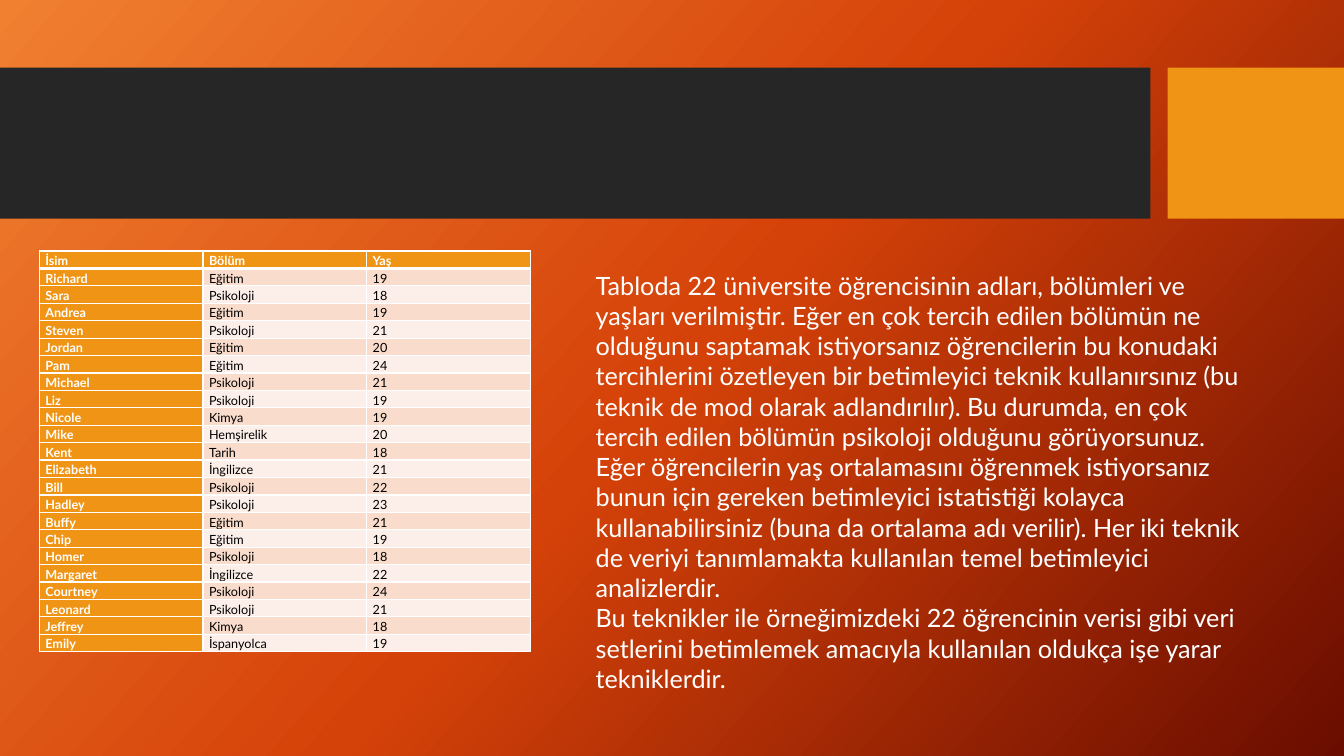
from copy import deepcopy

from lxml import etree
from pptx import Presentation
from pptx.dml.color import RGBColor
from pptx.enum.shapes import MSO_SHAPE
from pptx.oxml.ns import qn
from pptx.util import Inches, Pt

RECT = MSO_SHAPE.RECTANGLE
FONT = "Lato"
WHITE, BLACK, DARK, AMBER = "FFFFFF", "000000", "262626", "F09415"
BANDS = ("FCEEE8", "F9DCCC")
STOPS = ((0, "F18031"), (0.5, "D54209"), (1, "6A0D00"))

ROWS = [
    ("İsim", "Bölüm", "Yaş"),
    ("Richard", "Eğitim", "19"),
    ("Sara", "Psikoloji", "18"),
    ("Andrea", "Eğitim", "19"),
    ("Steven", "Psikoloji", "21"),
    ("Jordan", "Eğitim", "20"),
    ("Pam", "Eğitim", "24"),
    ("Michael", "Psikoloji", "21"),
    ("Liz", "Psikoloji", "19"),
    ("Nicole", "Kimya", "19"),
    ("Mike", "Hemşirelik", "20"),
    ("Kent", "Tarih", "18"),
    ("Elizabeth", "İngilizce", "21"),
    ("Bill", "Psikoloji", "22"),
    ("Hadley", "Psikoloji", "23"),
    ("Buffy", "Eğitim", "21"),
    ("Chip", "Eğitim", "19"),
    ("Homer", "Psikoloji", "18"),
    ("Margaret", "İngilizce", "22"),
    ("Courtney", "Psikoloji", "24"),
    ("Leonard", "Psikoloji", "21"),
    ("Jeffrey", "Kimya", "18"),
    ("Emily", "İspanyolca", "19"),
]

NOTES = [
    "Tabloda 22 üniversite öğrencisinin adları, bölümleri ve yaşları verilmiştir. "
    "Eğer en çok tercih edilen bölümün ne olduğunu saptamak istiyorsanız öğrencilerin "
    "bu konudaki tercihlerini özetleyen bir betimleyici teknik kullanırsınız (bu teknik "
    "de mod olarak adlandırılır). Bu durumda, en çok tercih edilen bölümün psikoloji "
    "olduğunu görüyorsunuz. Eğer öğrencilerin yaş ortalamasını öğrenmek istiyorsanız "
    "bunun için gereken betimleyici istatistiği kolayca kullanabilirsiniz (buna da "
    "ortalama adı verilir). Her iki teknik de veriyi tanımlamakta kullanılan temel "
    "betimleyici analizlerdir.",
    "Bu teknikler ile örneğimizdeki 22 öğrencinin verisi gibi veri setlerini betimlemek "
    "amacıyla kullanılan oldukça işe yarar tekniklerdir.",
]


def color(code):
    return RGBColor.from_string(code)


def style(para, size, code, bold=False):
    for run in para.runs:
        font = run.font
        font.name, font.size, font.bold = FONT, Pt(size), bold
        font.color.rgb = color(code)


def backdrop(slide):
    fill = slide.background.fill
    fill.gradient()
    fill.gradient_angle = 360 - 42
    # The default gradient has two stops; add a third
    stops = slide.element.find(".//" + qn("a:gsLst"))
    stops.append(deepcopy(stops[-1]))
    for stop, (pos, code) in zip(fill.gradient_stops, STOPS):
        stop.position = pos
        stop.color.rgb = color(code)


def band(slide, left, top, width, height):
    gap, block = 0.17, 1.75
    bar = width - block - gap
    for x, w, code in ((left, bar, DARK), (left + bar + gap, block, AMBER)):
        rect = slide.shapes.add_shape(RECT, Inches(x), Inches(top), Inches(w), Inches(height))
        rect.shadow.inherit = False
        rect.fill.solid()
        rect.fill.fore_color.rgb = color(code)
        rect.line.fill.background()


def border(cell, side, width):
    props = cell._tc.get_or_add_tcPr()
    line = etree.SubElement(props, qn("a:ln" + side), w=str(Pt(width)))
    fill = etree.SubElement(line, qn("a:solidFill"))
    etree.SubElement(fill, qn("a:srgbClr"), val=WHITE)


def roster(slide, left, top, width, height):
    count, cols = len(ROWS), len(ROWS[0])
    table = slide.shapes.add_table(
        count, cols, Inches(left), Inches(top), Inches(width), Inches(height)).table
    for col in table.columns:
        col.width = Inches(width / cols)
    for r, row in enumerate(ROWS):
        table.rows[r].height = Inches(height / count)
        for c, text in enumerate(row):
            cell = table.cell(r, c)
            head = r == 0 or c == 0
            cell.margin_left = cell.margin_right = Inches(0.06)
            cell.margin_top = cell.margin_bottom = 0
            # Borders go before the fill; a thick rule runs under the header
            for side in "LRTB":
                thick = (r, side) in ((0, "B"), (1, "T"))
                border(cell, side, 3 if thick else 1)
            cell.fill.solid()
            cell.fill.fore_color.rgb = color(AMBER if head else BANDS[r % 2])
            para = cell.text_frame.paragraphs[0]
            para.text = text
            para.line_spacing = 1.15
            para.space_after = Pt(10)
            style(para, 9, WHITE if head else BLACK, head)


def notes(slide, left, top, width, height):
    box = slide.shapes.add_textbox(Inches(left), Inches(top), Inches(width), Inches(height))
    frame = box.text_frame
    frame.word_wrap = True
    frame.text = "\n".join(NOTES)
    for para in frame.paragraphs:
        style(para, 18, WHITE)


def main():
    deck = Presentation()
    deck.slide_width, deck.slide_height = Inches(13.33), Inches(7.5)
    slide = deck.slides.add_slide(deck.slide_layouts[6])
    backdrop(slide)
    band(slide, 0, 0.67, 13.33, 1.5)
    roster(slide, 0.39, 2.49, 4.87, 3.97)
    notes(slide, 5.81, 2.63, 6.67, 4.64)
    deck.save("out.pptx")


if __name__ == "__main__":
    main()
